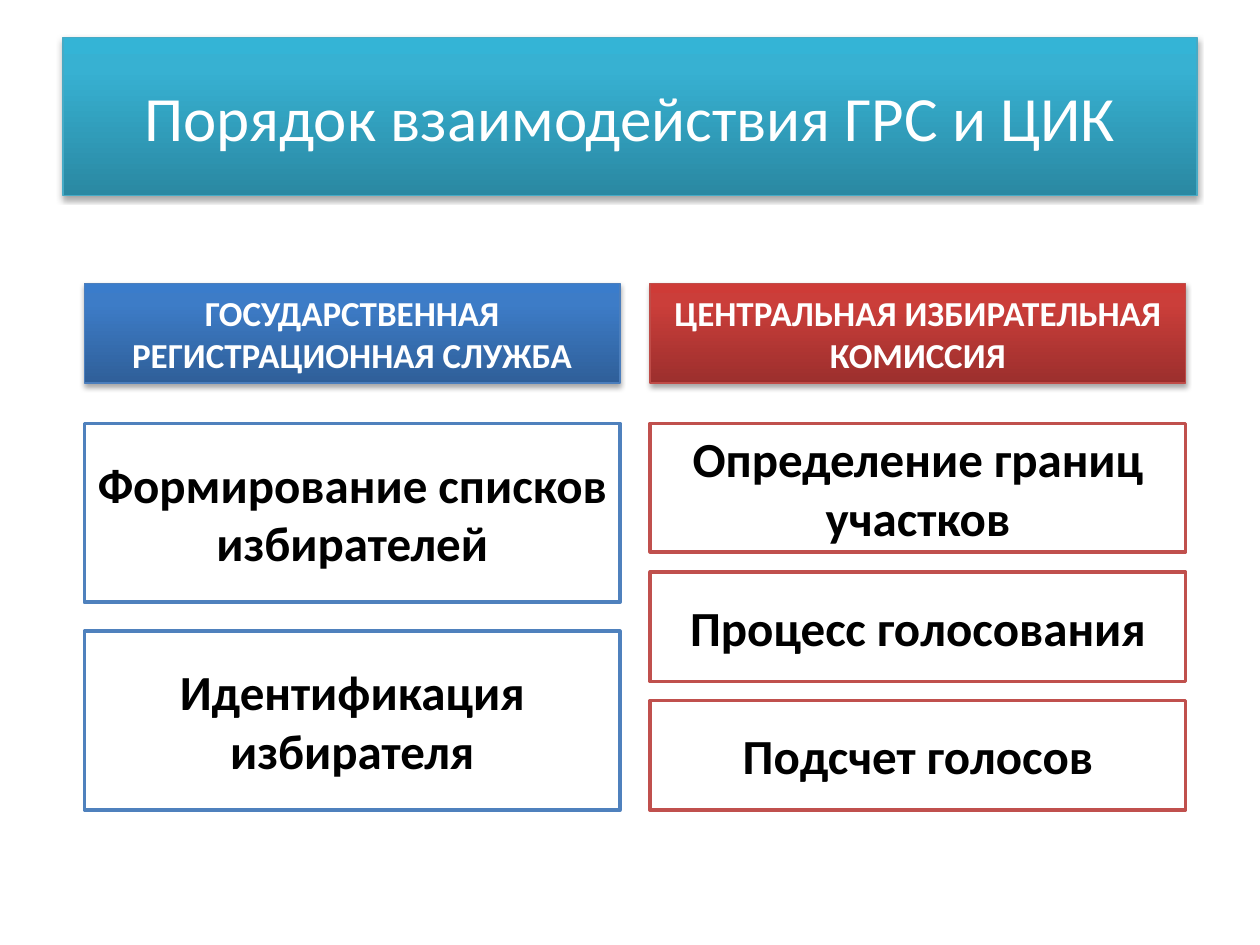
import pptx
import pptx.util
import pptx.dml.color
import pptx.enum.shapes
import pptx.enum.text
import pptx.oxml.ns
from lxml import etree

SCALE = 9144  # EMU in one px, 100 px to the inch
FONT = "Calibri"
INK = {
    "white": "FFFFFF", "black": "000000",
    "teal edge": "46AAC5",
    "blue edge": "4B7EBC", "blue frame": "4F81BD",
    "red edge": "BF4C48", "red frame": "C0504D",
}
FADES = {  # bottom, 80 %, top
    "teal": ("2A88A2", "37B1D2", "34B4D6"),
    "blue": ("2F5F99", "3D7CC7", "3A7CCB"),
    "red": ("9C2F2D", "CB3E3A", "CE3B37"),
}
WIDE = 425
HEAD_TOP, HEAD_HIGH = 225, 79
LISTS = [
    ("blue", 67, "ГОСУДАРСТВЕННАЯ РЕГИСТРАЦИОННАЯ СЛУЖБА", [
        (336, 142, "Формирование списков избирателей"),
        (501, 142, "Идентификация избирателя"),
    ]),
    ("red", 516, "ЦЕНТРАЛЬНАЯ ИЗБИРАТЕЛЬНАЯ КОМИССИЯ", [
        (336, 102, "Определение границ участков"),
        (454, 87, "Процесс голосования"),
        (556, 87, "Подсчет голосов"),
    ]),
]


def px(count):
    return pptx.util.Emu(count * SCALE)


def rgb(name):
    return pptx.dml.color.RGBColor.from_string(INK[name])


def node(parent, tag, **attrs):
    """Add a DrawingML child element."""
    return etree.SubElement(parent, pptx.oxml.ns.qn("a:" + tag), attrs)


class Board:
    def __init__(self, deck):
        self.slide = deck.slides.add_slide(deck.slide_layouts[5])

    def place(self, shape, left, top, width, height):
        shape.left, shape.top = px(left), px(top)
        shape.width, shape.height = px(width), px(height)

    def label(self, shape, text, size, ink, bold):
        frame = shape.text_frame
        frame.word_wrap = True
        frame.auto_size = pptx.enum.text.MSO_AUTO_SIZE.NONE
        frame.vertical_anchor = pptx.enum.text.MSO_ANCHOR.MIDDLE
        line = frame.paragraphs[0]
        line.alignment = pptx.enum.text.PP_ALIGN.CENTER
        run = line.add_run()
        run.text = text
        run.font.name = FONT
        run.font.size = pptx.util.Pt(size)
        run.font.bold = bold
        run.font.color.rgb = rgb(ink)

    def edge(self, shape, ink, width):
        shape.line.color.rgb = rgb(ink)
        shape.line.width = pptx.util.Pt(width)

    def gloss(self, shape, hue):
        """Give a shape a vertical fade, a thin edge and a soft shadow."""
        shape.fill.gradient()
        shape.fill.gradient_angle = 90
        props = shape._element.spPr
        stops = props.find(".//" + pptx.oxml.ns.qn("a:gsLst"))
        for stop in list(stops):
            stops.remove(stop)
        for spot, tint in zip((0, 80, 100), FADES[hue]):
            node(node(stops, "gs", pos=str(spot * 1000)), "srgbClr", val=tint)
        self.edge(shape, hue + " edge", 0.75)
        shape.shadow.inherit = False
        effects = props.find(pptx.oxml.ns.qn("a:effectLst"))
        shade = node(effects, "outerShdw", blurRad=str(pptx.util.Pt(3.1)),
                     dist=str(pptx.util.Pt(1.8)), dir="5400000",
                     rotWithShape="0")
        node(node(shade, "srgbClr", val=INK["black"]), "alpha", val="35000")

    def rect(self, *box):
        kind = pptx.enum.shapes.MSO_SHAPE.RECTANGLE
        shape = self.slide.shapes.add_shape(kind, *map(px, box))
        shape.shadow.inherit = False
        return shape

    def title(self, text, *box):
        shape = self.slide.shapes.title
        self.place(shape, *box)
        self.gloss(shape, "teal")
        self.label(shape, text, 36, "white", False)

    def head(self, text, hue, *box):
        shape = self.rect(*box)
        self.gloss(shape, hue)
        self.label(shape, text, 20, "white", True)

    def task(self, text, hue, *box):
        shape = self.rect(*box)
        shape.fill.solid()
        shape.fill.fore_color.rgb = rgb("white")
        self.edge(shape, hue + " frame", 2)
        self.label(shape, text, 28, "black", True)


def main():
    deck = pptx.Presentation()
    deck.slide_width, deck.slide_height = px(1000), px(750)
    board = Board(deck)
    board.title("Порядок взаимодействия ГРС и ЦИК", 50, 30, 900, 125)
    for hue, left, name, tasks in LISTS:
        board.head(name, hue, left, HEAD_TOP, WIDE, HEAD_HIGH)
        for top, high, text in tasks:
            board.task(text, hue, left, top, WIDE, high)
    deck.save("out.pptx")


if __name__ == "__main__":
    main()
